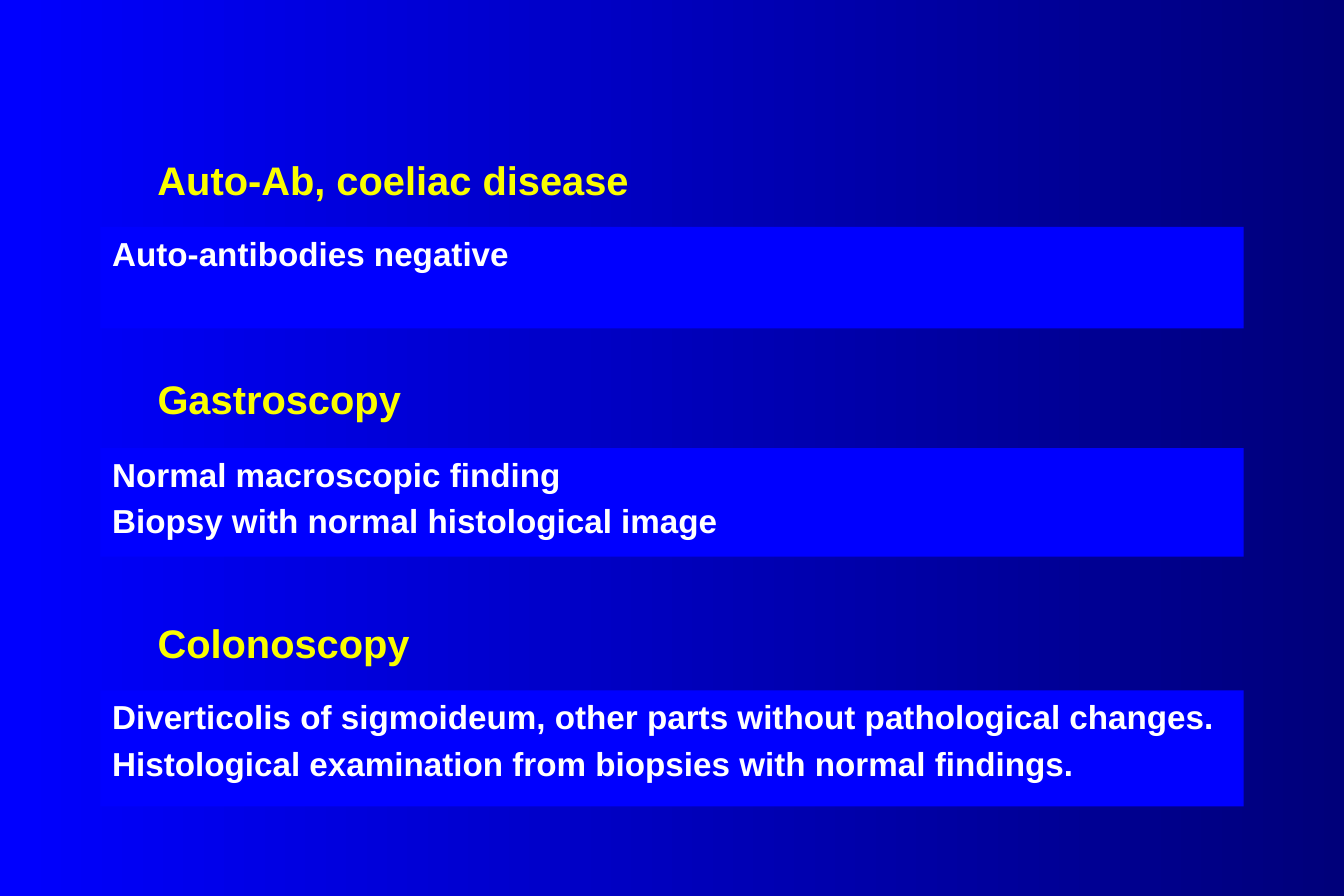
"""Build a slide listing auto-antibody, gastroscopy and colonoscopy findings."""
import pptx
import pptx.dml.color
import pptx.enum.shapes
import pptx.enum.text
import pptx.util

PX = 9144
COLORS = {"panel": "0000FF", "shade": "00007A", "heading": "FAFD00", "text": "FFFFFF"}
PANEL_LEFT, PANEL_WIDTH = 84, 957
HEADING_LEFT, HEADING_HEIGHT = 122, 50
HANGING_INDENT = 38

SECTIONS = [
    ("Auto-Ab, coeliac disease", 125, 504, 190, 85, ["Auto-antibodies negative"]),
    ("Gastroscopy", 309, 319, 375, 91,
     ["Normal macroscopic finding", "Biopsy with normal histological image"]),
    ("Colonoscopy", 513, 319, 578, 97,
     ["Diverticolis of sigmoideum, other parts without pathological changes.",
      "Histological examination from biopsies with normal findings."]),
]


def color(name):
    return pptx.dml.color.RGBColor.from_string(COLORS[name])


def add_run(paragraph, text, size, color_name):
    paragraph.alignment = pptx.enum.text.PP_ALIGN.LEFT
    run = paragraph.add_run()
    run.text = text
    run.font.name = "Arial"
    run.font.size = pptx.util.Pt(size)
    run.font.bold = True
    run.font.color.rgb = color(color_name)


presentation = pptx.Presentation()
presentation.slide_width = 1125 * PX
presentation.slide_height = 750 * PX
slide = presentation.slides.add_slide(presentation.slide_layouts[6])

background = slide.background.fill
background.gradient()
background.gradient_angle = 0
for stop, name, position in zip(background.gradient_stops, ("panel", "shade"), (0, 1)):
    stop.color.rgb = color(name)
    stop.position = position

for title, title_top, title_width, panel_top, panel_height, findings in SECTIONS:
    heading = slide.shapes.add_textbox(
        HEADING_LEFT * PX, title_top * PX, title_width * PX, HEADING_HEIGHT * PX)
    heading.text_frame.word_wrap = True
    heading.text_frame.auto_size = pptx.enum.text.MSO_AUTO_SIZE.SHAPE_TO_FIT_TEXT
    add_run(heading.text_frame.paragraphs[0], title, 24, "heading")

    panel = slide.shapes.add_shape(
        pptx.enum.shapes.MSO_SHAPE.RECTANGLE,
        PANEL_LEFT * PX, panel_top * PX, PANEL_WIDTH * PX, panel_height * PX)
    panel.shadow.inherit = False
    panel.fill.solid()
    panel.fill.fore_color.rgb = color("panel")
    panel.line.fill.background()
    text_frame = panel.text_frame
    text_frame.word_wrap = True
    text_frame.vertical_anchor = pptx.enum.text.MSO_ANCHOR.TOP
    for index, finding in enumerate(findings):
        paragraph = text_frame.add_paragraph() if index else text_frame.paragraphs[0]
        paragraph.space_before = pptx.util.Pt(4)
        properties = paragraph._p.get_or_add_pPr()
        properties.set("marL", str(HANGING_INDENT * PX))
        properties.set("indent", str(-HANGING_INDENT * PX))
        add_run(paragraph, finding, 20, "text")

presentation.save("out.pptx")
